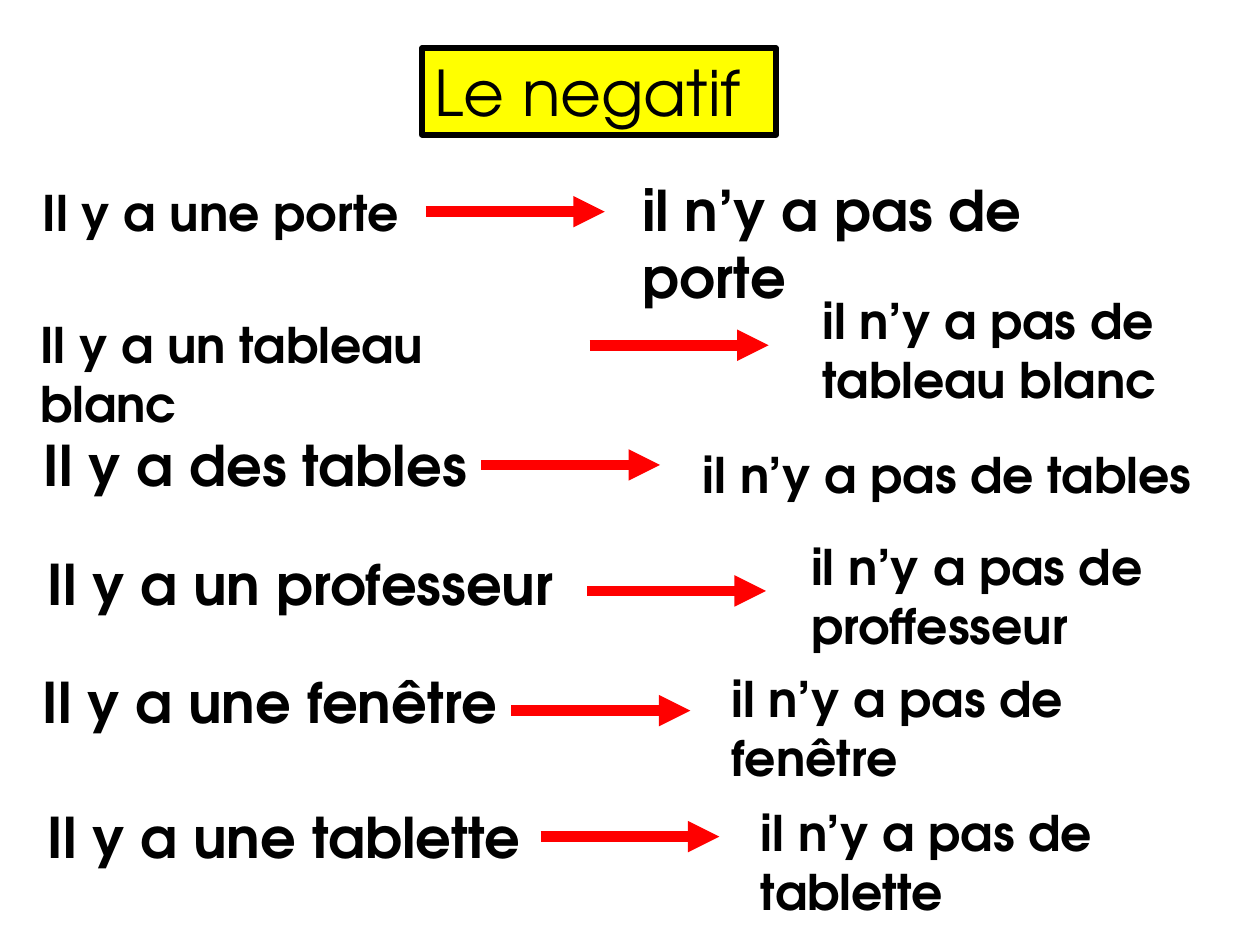
"""Build a French lesson slide on the negative form of "il y a"."""
from dataclasses import dataclass

from lxml import etree
from pptx import Presentation
from pptx.dml.color import RGBColor
from pptx.enum import shapes, text
from pptx.oxml import ns
from pptx.util import Pt

FONT = "TeX Gyre Adventor"
BLACK, RED, YELLOW = "000000", "FF0000", "FFFF00"
ARROW_LENGTH = 102.2


@dataclass
class Phrase:
    wording: str
    left: float
    top: float
    width: float
    height: float
    size: int = 28
    middle: bool = False


@dataclass
class Pair:
    positive: Phrase
    arrow_left: float
    arrow_y: float
    negative: Phrase


PAIRS = [
    Pair(Phrase("Il y a une porte", 17.3, 95.8, 370.8, 50.4, middle=True), 243.4, 121,
         Phrase("il n’y a pas de porte", 360, 96.5, 320, 46.1, 32)),
    Pair(Phrase("Il y a un tableau blanc", 15.8, 176.4, 310.3, 41), 337, 197.3,
         Phrase("il n’y a pas de tableau blanc", 463, 162.7, 208.8, 74.9)),
    Pair(Phrase("Il y a des tables", 18, 242.6, 287.3, 46.1, 32), 275, 265.7,
         Phrase("il n’y a pas de tables", 394.6, 250.6, 313.9, 41)),
    Pair(Phrase("Il y a un professeur", 20.2, 310.3, 363.6, 46.1, 32), 335.5, 337.7,
         Phrase("il n’y a pas de proffesseur", 456.5, 303.1, 244.1, 74.9)),
    Pair(Phrase("Il y a une fenêtre", 17.3, 375.1, 277.2, 51.1, 32, True), 292.3, 406.1,
         Phrase("il n’y a pas de fenêtre", 411.1, 378.7, 278.6, 97.2)),
    Pair(Phrase("Il y a une tablette", 20.2, 455, 369.4, 46.1, 32), 308.9, 478.1,
         Phrase("il n’y a pas de tablette", 427.7, 455, 244.1, 74.9)),
]


def colour(value: str) -> RGBColor:
    """Turn a hex string into a colour."""
    return RGBColor.from_string(value)


def write(box, wording: str, size: int, bold: bool, middle: bool) -> None:
    """Fill a shape with one left-aligned line of styled text."""
    frame = box.text_frame
    frame.text = wording
    frame.word_wrap = True
    frame.auto_size = text.MSO_AUTO_SIZE.NONE
    frame.vertical_anchor = text.MSO_ANCHOR.MIDDLE if middle else text.MSO_ANCHOR.TOP
    para = frame.paragraphs[0]
    para.alignment = text.PP_ALIGN.LEFT
    for span in para.runs:
        span.font.name = FONT
        span.font.size = Pt(size)
        span.font.bold = bold
        span.font.color.rgb = colour(BLACK)


def add_title(page, wording: str) -> None:
    """Place the framed yellow title."""
    box = page.shapes.title
    box.left, box.top, box.width, box.height = Pt(241.2), Pt(27.4), Pt(202.3), Pt(49.7)
    box.fill.solid()
    box.fill.fore_color.rgb = colour(YELLOW)
    box.line.color.rgb = colour(BLACK)
    box.line.width = Pt(3)
    write(box, wording, 36, bold=False, middle=True)


def add_phrase(page, phrase: Phrase) -> None:
    """Add one bold phrase."""
    box = page.shapes.add_textbox(
        Pt(phrase.left), Pt(phrase.top), Pt(phrase.width), Pt(phrase.height))
    write(box, phrase.wording, phrase.size, bold=True, middle=phrase.middle)


def add_arrow(page, left: float, y: float) -> None:
    """Add a thick red arrow pointing right."""
    arrow = page.shapes.add_connector(
        shapes.MSO_CONNECTOR.STRAIGHT, Pt(left), Pt(y), Pt(left + ARROW_LENGTH), Pt(y))
    arrow.line.color.rgb = colour(RED)
    arrow.line.width = Pt(6)
    etree.SubElement(arrow.line._get_or_add_ln(), ns.qn("a:tailEnd"), type="triangle")
    etree.SubElement(arrow._element.spPr, ns.qn("a:effectLst"))


def main() -> None:
    """Build and save the deck."""
    deck = Presentation()
    deck.slide_width, deck.slide_height = Pt(720), Pt(540)
    page = deck.slides.add_slide(deck.slide_layouts[5])
    add_title(page, "Le negatif")
    for pair in PAIRS:
        add_phrase(page, pair.positive)
        add_arrow(page, pair.arrow_left, pair.arrow_y)
        add_phrase(page, pair.negative)
    deck.save("out.pptx")


if __name__ == "__main__":
    main()
